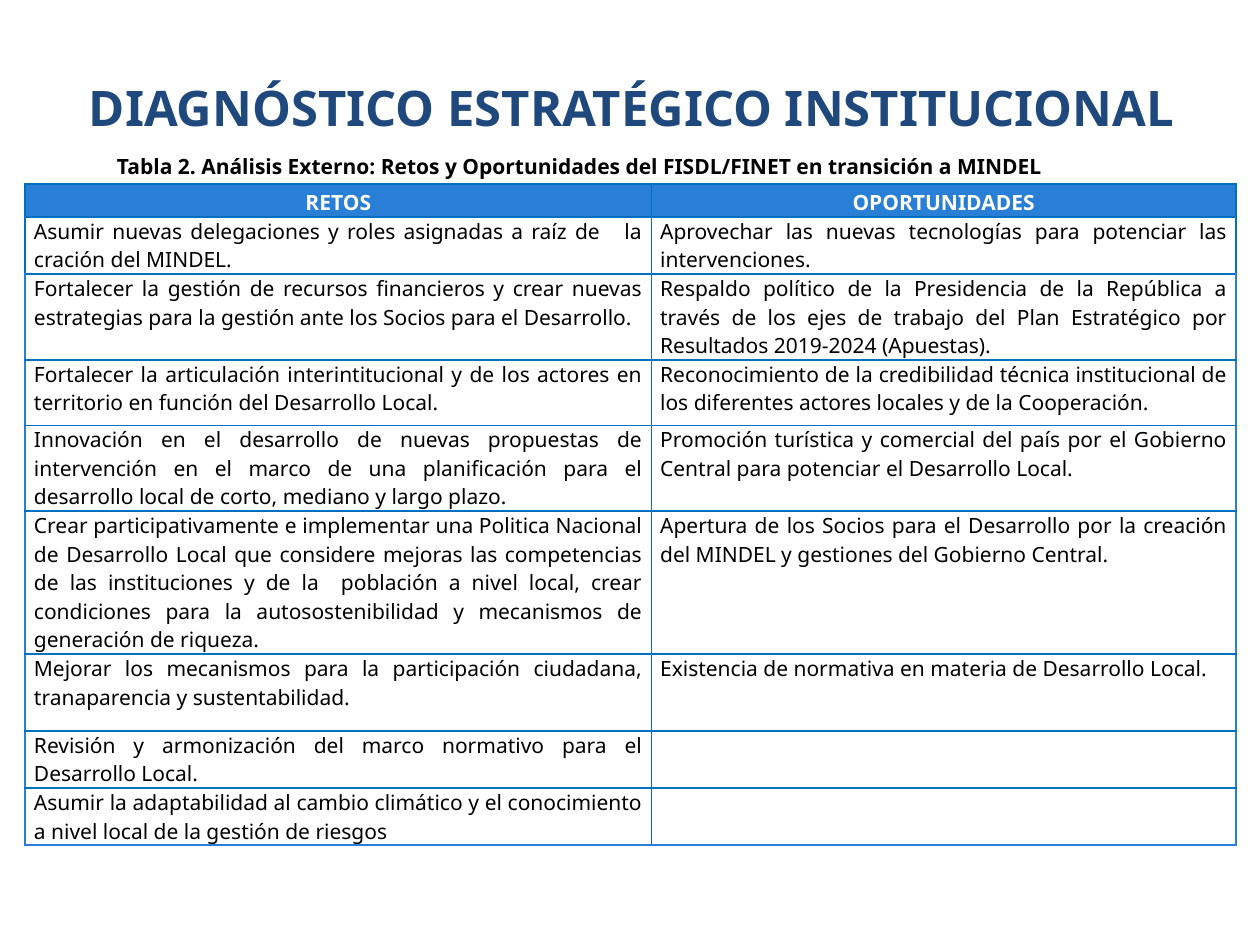
from dataclasses import dataclass

from lxml import etree
from pptx import Presentation
from pptx.dml.color import RGBColor
from pptx.enum.text import MSO_ANCHOR, MSO_AUTO_SIZE, PP_ALIGN
from pptx.oxml.ns import qn
from pptx.util import Inches, Pt

CENTER, JUSTIFY = PP_ALIGN.CENTER, PP_ALIGN.JUSTIFY
TOP, MIDDLE = MSO_ANCHOR.TOP, MSO_ANCHOR.MIDDLE
FIT_SHAPE, NO_FIT = MSO_AUTO_SIZE.SHAPE_TO_FIT_TEXT, MSO_AUTO_SIZE.NONE


@dataclass(frozen=True)
class Theme:
    font: str = "Noto Sans"
    title: str = "1F497D"
    header: str = "297FD5"
    grid: str = "0070C0"
    text: str = "000000"
    light: str = "FFFFFF"
    title_size: int = 28
    body_size: int = 12


theme = Theme()


def style(p, size, color, bold=False, align=None):
    p.font.name = theme.font
    p.font.size = Pt(size)
    p.font.bold = bold
    p.font.color.rgb = RGBColor.from_string(color)
    p.alignment = align


def add_borders(cell, colors):
    tc_pr = cell._tc.get_or_add_tcPr()
    for side, color in zip("LRTB", colors):
        ln = etree.SubElement(tc_pr, qn(f"a:ln{side}"), w=str(Pt(1)))
        fill = etree.SubElement(ln, qn("a:solidFill"))
        etree.SubElement(fill, qn("a:srgbClr"), val=color)


rows = [
    ("RETOS", "OPORTUNIDADES"),
    ("Asumir nuevas delegaciones y roles asignadas a raíz de   la cración del MINDEL.",
     "Aprovechar las nuevas tecnologías para potenciar las intervenciones."),
    ("Fortalecer la gestión de recursos financieros y crear nuevas estrategias para la "
     "gestión ante los Socios para el Desarrollo.",
     "Respaldo político de la Presidencia de la República a través de los ejes de trabajo "
     "del Plan Estratégico por Resultados 2019-2024 (Apuestas)."),
    ("Fortalecer la articulación interintitucional y de los actores en territorio en "
     "función del Desarrollo Local. ",
     "Reconocimiento de la credibilidad técnica institucional de los diferentes actores "
     "locales y de la Cooperación."),
    ("Innovación en el desarrollo de nuevas propuestas de intervención en el marco de una "
     "planificación para el desarrollo local de corto, mediano y largo plazo.",
     "Promoción turística y comercial del país por el Gobierno Central para potenciar el "
     "Desarrollo Local."),
    ("Crear participativamente e implementar una Politica Nacional de Desarrollo Local que "
     "considere mejoras las competencias de las instituciones y de la  población a nivel "
     "local, crear condiciones para la autosostenibilidad y mecanismos de generación de riqueza.",
     "Apertura de los Socios para el Desarrollo por la creación del MINDEL y gestiones del "
     "Gobierno Central."),
    ("Mejorar los mecanismos para la participación ciudadana, tranaparencia y sustentabilidad.",
     "Existencia de normativa en materia de Desarrollo Local."),
    ("Revisión y armonización del marco normativo para el Desarrollo Local.", ""),
    ("Asumir la adaptabilidad al cambio climático y el conocimiento a nivel local de la "
     "gestión de riesgos", ""),
]
row_heights = [0.22, 0.43, 0.52, 0.52, 0.43, 0.84, 0.61, 0.41, 0.41]
col_widths = [4.97, 4.64]

prs = Presentation()
prs.slide_width, prs.slide_height = Inches(10), Inches(7.5)
s = prs.slides.add_slide(prs.slide_layouts[5])

title = s.shapes.title
title.left, title.top = Inches(0.51), Inches(0.22)
title.width, title.height = Inches(9), Inches(1.25)
tf = title.text_frame
tf.text = "DIAGNÓSTICO ESTRATÉGICO INSTITUCIONAL"
tf.vertical_anchor = MIDDLE
tf.auto_size = NO_FIT
style(tf.paragraphs[0], theme.title_size, theme.title, True, CENTER)

table = s.shapes.add_table(len(rows), len(col_widths), Inches(0.2), Inches(1.46),
                           Inches(sum(col_widths)), Inches(sum(row_heights))).table
table.first_row = table.horz_banding = False
for col, width in zip(table.columns, col_widths):
    col.width = Inches(width)
for row, height in zip(table.rows, row_heights):
    row.height = Inches(height)

for i, texts in enumerate(rows):
    is_header = i == 0
    edge = theme.grid if i < 2 else theme.header
    for j, text in enumerate(texts):
        cell = table.cell(i, j)
        cell.margin_left = cell.margin_right = Inches(0.07)
        cell.margin_top = cell.margin_bottom = 0
        cell.vertical_anchor = MIDDLE if is_header else TOP
        sides = (edge, theme.grid) if j == 0 else (theme.grid, edge)
        add_borders(cell, (*sides, theme.grid, edge))
        cell.text = text
        p = cell.text_frame.paragraphs[0]
        if is_header:
            cell.fill.solid()
            cell.fill.fore_color.rgb = RGBColor.from_string(theme.header)
            style(p, theme.body_size, theme.light, True, CENTER)
            p.line_spacing = 1.15
        else:
            cell.fill.background()
            style(p, theme.body_size, theme.text, False, JUSTIFY)

caption = s.shapes.add_textbox(Inches(0.83), Inches(1.17), Inches(7.65), Inches(0.3))
tf = caption.text_frame
tf.text = "Tabla 2. Análisis Externo: Retos y Oportunidades del FISDL/FINET en transición a MINDEL"
tf.word_wrap = False
tf.auto_size = FIT_SHAPE
tf.vertical_anchor = MIDDLE
style(tf.paragraphs[0], theme.body_size, theme.text, True)

prs.save("out.pptx")
